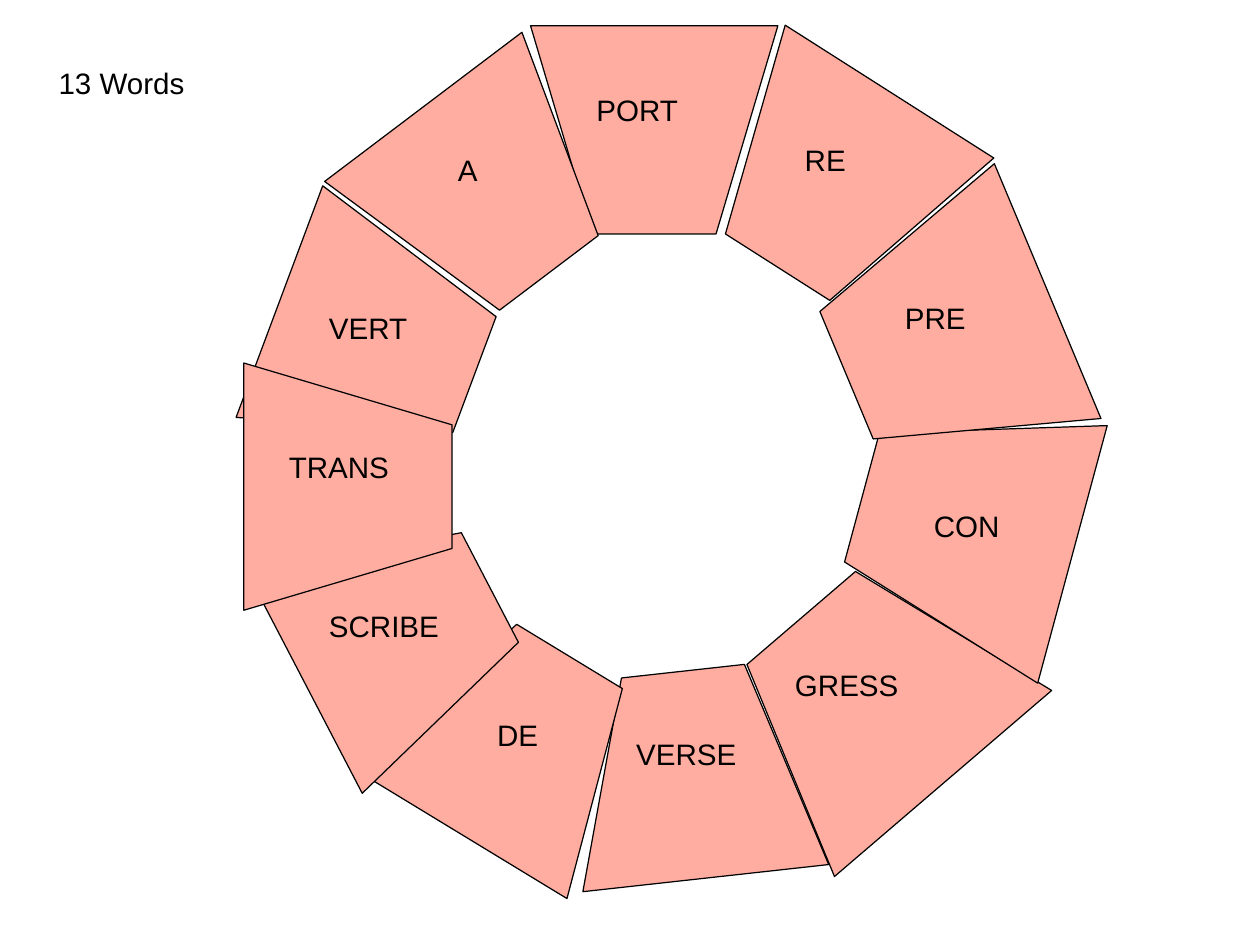
from collections import namedtuple

from pptx import Presentation
from pptx.dml.color import RGBColor
from pptx.enum.text import MSO_ANCHOR, MSO_AUTO_SIZE, PP_ALIGN
from pptx.util import Cm, Pt

SALMON = RGBColor(0xFE, 0xAD, 0xA0)
BLACK = RGBColor(0, 0, 0)
FONT = "Arial"
LEFT, TOP = PP_ALIGN.LEFT, MSO_ANCHOR.TOP
GROW = MSO_AUTO_SIZE.SHAPE_TO_FIT_TEXT

Box = namedtuple("Box", "left top width height")
Segment = namedtuple("Segment", "word left top turn label_left label_top label_width size")

# All lengths in centimetres
REGULAR = (7.09, 5.97)
LABEL_HEIGHT = 1.32
INSET = 0.18
RING = Box(6, 0, 26, 26)
TITLE = Box(1.5, 1.68, 4.01, LABEL_HEIGHT)

# Places are measured from the ring's corner, back to front
SEGMENTS = [
    Segment("GRESS", 14.9, 16.97, 139.4, 16.61, 18.95, 3.35, (8.2, 6.25)),
    Segment("CON", 17.9, 11.96, 105.1, 20.59, 14.4, 2.29, (7.65, 6.25)),
    Segment("PRE", 17.19, 6.43, 67.3, 19.76, 8.43, 2.13, (7.92, 6.25)),
    Segment("RE", 14.35, 2.16, 32.5, 16.89, 3.89, 1.57, REGULAR),
    Segment("PORT", 9.21, 0.74, 0, 10.92, 2.46, 2.74, REGULAR),
    Segment("VERSE", 10.36, 19.23, 173.7, 12.06, 20.93, 3.28, REGULAR),
    Segment("VERT", 1.26, 6.71, 290.5, 3.25, 8.71, 2.64, REGULAR),
    Segment("A", 4.39, 2.46, 322.9, 6.95, 4.17, 1.42, REGULAR),
    Segment("DE", 5.23, 18.39, 211.3, 8.07, 20.37, 1.57, REGULAR),
    Segment("SCRIBE", 1.85, 15.24, 242.5, 3.25, 17.25, 3.56, REGULAR),
    Segment("TRANS", 0.43, 10.97, 270, 2.1, 12.7, 3.28, REGULAR),
]


def draw_trapezoid(page, box, turn):
    """Full width at the top, half width at the bottom, then turned."""
    right, bottom = box.left + box.width, box.top + box.height
    inset = box.width / 4
    corners = [(box.left + inset, bottom), (right - inset, bottom), (right, box.top)]
    builder = page.shapes.build_freeform(Cm(box.left), Cm(box.top))
    builder.add_line_segments([(Cm(x), Cm(y)) for x, y in corners], close=True)
    shape = builder.convert_to_shape()
    shape.rotation = turn
    shape.shadow.inherit = False
    shape.fill.solid()
    shape.fill.fore_color.rgb = SALMON
    shape.line.color.rgb = BLACK
    shape.line.width = Pt(1)


def draw_label(page, box, text, wrap=False):
    frame = page.shapes.add_textbox(*map(Cm, box)).text_frame
    frame.margin_left = frame.margin_right = Cm(INSET)
    frame.margin_top = frame.margin_bottom = Cm(INSET)
    frame.word_wrap = wrap
    frame.auto_size = GROW
    frame.vertical_anchor = TOP
    para = frame.paragraphs[0]
    para.alignment = LEFT
    span = para.add_run()
    span.text = text
    span.font.name = FONT
    span.font.size = Pt(24)
    span.font.color.rgb = BLACK


def draw_ring(page, box):
    # Segments
    for part in SEGMENTS:
        place = Box(box.left + part.left, box.top + part.top, *part.size)
        draw_trapezoid(page, place, part.turn)
    # Words on top
    for part in SEGMENTS:
        place = Box(box.left + part.label_left, box.top + part.label_top,
                    part.label_width, LABEL_HEIGHT)
        draw_label(page, place, part.word, wrap=part.word == "A")


def main():
    deck = Presentation()
    deck.slide_width, deck.slide_height = Cm(36.12), Cm(27.1)
    page = deck.slides.add_slide(deck.slide_layouts[6])
    draw_ring(page, RING)
    draw_label(page, TITLE, "13 Words")
    deck.save("out.pptx")


if __name__ == "__main__":
    main()
